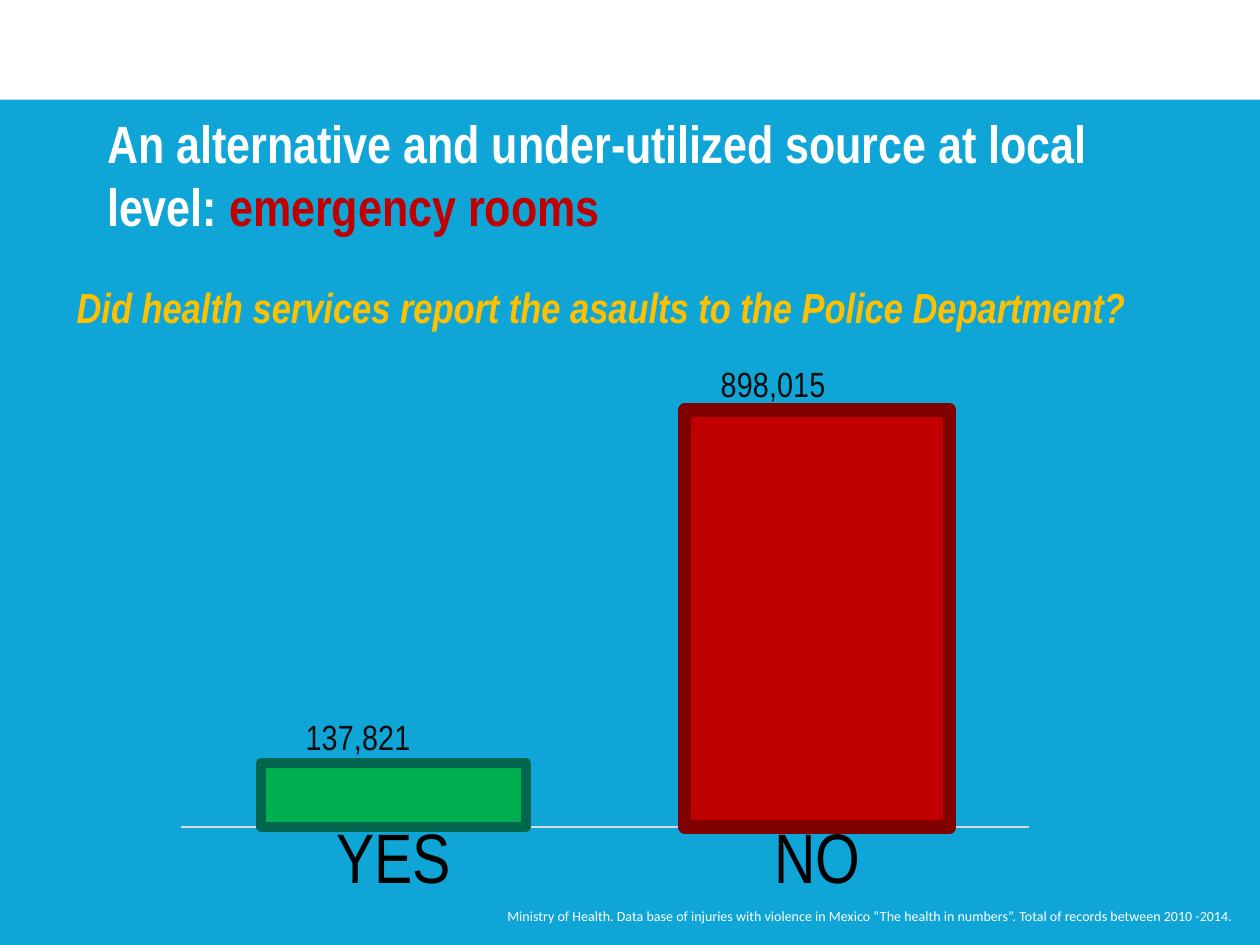
from lxml import etree
from pptx import Presentation
from pptx.chart.data import CategoryChartData
from pptx.dml.color import RGBColor
from pptx.enum.chart import XL_CHART_TYPE, XL_LABEL_POSITION, XL_TICK_MARK
from pptx.enum.shapes import MSO_SHAPE
from pptx.enum.text import MSO_ANCHOR, PP_ALIGN
from pptx.oxml.ns import qn
from pptx.util import Inches, Pt

COLUMNS = XL_CHART_TYPE.COLUMN_CLUSTERED
OUTSIDE_END = XL_LABEL_POSITION.OUTSIDE_END
NO_TICKS = XL_TICK_MARK.NONE
RECTANGLE = MSO_SHAPE.RECTANGLE
MIDDLE, TOP = MSO_ANCHOR.MIDDLE, MSO_ANCHOR.TOP
LEFT, RIGHT = PP_ALIGN.LEFT, PP_ALIGN.RIGHT

SKY = RGBColor(0x0F, 0xA6, 0xD7)
WHITE = RGBColor(0xFF, 0xFF, 0xFF)
BLACK = RGBColor(0x00, 0x00, 0x00)
INK = RGBColor(0x0D, 0x0D, 0x0D)
AXIS_GREY = RGBColor(0xD9, 0xD9, 0xD9)
AMBER = RGBColor(0xFF, 0xC0, 0x00)
RED = RGBColor(0xC0, 0x00, 0x00)
DARK_RED = RGBColor(0x80, 0x00, 0x00)
GREEN = RGBColor(0x00, 0xB0, 0x50)
DARK_GREEN = RGBColor(0x00, 0x66, 0x4D)
NARROW, SANS = "Arial Narrow", "Calibri"

ANSWERS = [
    ("YES", 137821, GREEN, DARK_GREEN, 6, -0.04),
    ("NO", 898015, RED, DARK_RED, 7.5, -0.05),
]


def style_font(font, name, size, color, bold=False, italic=False):
    """Set typeface, size, colour and emphasis of a font."""
    font.name, font.size = name, Pt(size)
    font.bold, font.italic = bold, italic
    font.color.rgb = color


def set_layout(parent, index, **values):
    """Give a chart part a manual layout, in fractions of the chart."""
    for old in parent.findall(qn("c:layout")):
        parent.remove(old)
    layout = etree.Element(qn("c:layout"))
    manual = etree.SubElement(layout, qn("c:manualLayout"))
    for tag, value in values.items():
        etree.SubElement(manual, qn(f"c:{tag}")).set("val", str(value))
    parent.insert(index, layout)


def add_band(page, box):
    """Place the white band across the top."""
    band = page.shapes.add_shape(RECTANGLE, *map(Inches, box))
    band.shadow.inherit = False
    band.fill.solid()
    band.fill.fore_color.rgb = WHITE
    band.line.fill.background()


def place_title(page, box):
    """Move the title placeholder and fill in its two-colour heading."""
    title = page.shapes.title
    title.left, title.top, title.width, title.height = map(Inches, box)
    frame = title.text_frame
    frame.word_wrap, frame.vertical_anchor = True, MIDDLE
    para = frame.paragraphs[0]
    para.alignment = LEFT
    for text, color in [
        ("An alternative and under-utilized source at local level: ", WHITE),
        ("emergency rooms", RED),
    ]:
        span = para.add_run()
        span.text = text
        style_font(span.font, NARROW, 30, color, bold=True)


def add_text(page, box, text, anchor, alignment, **style):
    """Add a one-paragraph text box."""
    frame = page.shapes.add_textbox(*map(Inches, box)).text_frame
    frame.word_wrap, frame.vertical_anchor = True, anchor
    frame.text = text
    para = frame.paragraphs[0]
    para.alignment = alignment
    style_font(para.runs[0].font, **style)


def add_answer_chart(page, box):
    """Add the column chart of reported and unreported assaults."""
    data = CategoryChartData(number_format="#,##0")
    data.categories = [answer[0] for answer in ANSWERS]
    data.add_series("Series 1", [answer[1] for answer in ANSWERS])
    chart = page.shapes.add_chart(COLUMNS, *map(Inches, box), data).chart
    chart.has_legend = chart.has_title = False
    style_font(chart.font, NARROW, 10, BLACK)

    answers = chart.category_axis
    answers.major_tick_mark = answers.minor_tick_mark = NO_TICKS
    answers.format.line.color.rgb = AXIS_GREY
    answers.format.line.width = Pt(0.75)
    style_font(answers.tick_labels.font, NARROW, 40, BLACK)
    counts = chart.value_axis
    counts.minimum_scale, counts.maximum_scale = 0, 1000000
    counts.has_major_gridlines = counts.visible = False

    plot = chart.plots[0]
    plot.gap_width, plot.vary_by_categories = 60, False
    series = plot.series[0]
    labels = series.data_labels
    labels.show_value, labels.position = True, OUTSIDE_END
    labels.number_format, labels.number_format_is_linked = "#,##0", False
    style_font(labels.font, NARROW, 20, INK)
    for index, (_, _, fill, edge, width, shift) in enumerate(ANSWERS):
        point = series.points[index]
        point.format.fill.solid()
        point.format.fill.fore_color.rgb = fill
        point.format.line.color.rgb = edge
        point.format.line.width = Pt(width)
        label = point.data_label
        style_font(label.font, NARROW, 20, INK)
        label.position = OUTSIDE_END
        set_layout(labels._element.findall(qn("c:dLbl"))[index], 1, x=shift, y=0)

    plot_area = chart._chartSpace.find(qn("c:chart")).find(qn("c:plotArea"))
    set_layout(plot_area, 0, layoutTarget="inner", xMode="edge", yMode="edge",
               x=0.02, y=0.02, w=0.96, h=0.83)


def main():
    """Build the slide and save the deck."""
    deck = Presentation()
    deck.slide_width, deck.slide_height = Inches(10), Inches(7.5)
    page = deck.slides.add_slide(deck.slide_layouts[5])
    page.background.fill.solid()
    page.background.fill.fore_color.rgb = SKY
    add_band(page, (0, 0, 10, 0.79))
    place_title(page, (0.75, 0.76, 8.5, 1.25))
    add_answer_chart(page, (1.3, 2.79, 7.01, 4.44))
    add_text(page, (0.51, 1.91, 8.98, 1.05),
             "Did health services report the asaults to the Police Department?",
             MIDDLE, LEFT, name=NARROW, size=24, color=AMBER, bold=True, italic=True)
    add_text(page, (0.67, 7.15, 9.22, 0.24),
             "Ministry of Health. Data base of injuries with violence in Mexico "
             "“The health in numbers”. Total of records between 2010 -2014.",
             TOP, RIGHT, name=SANS, size=8, color=WHITE)
    deck.save("out.pptx")


if __name__ == "__main__":
    main()
